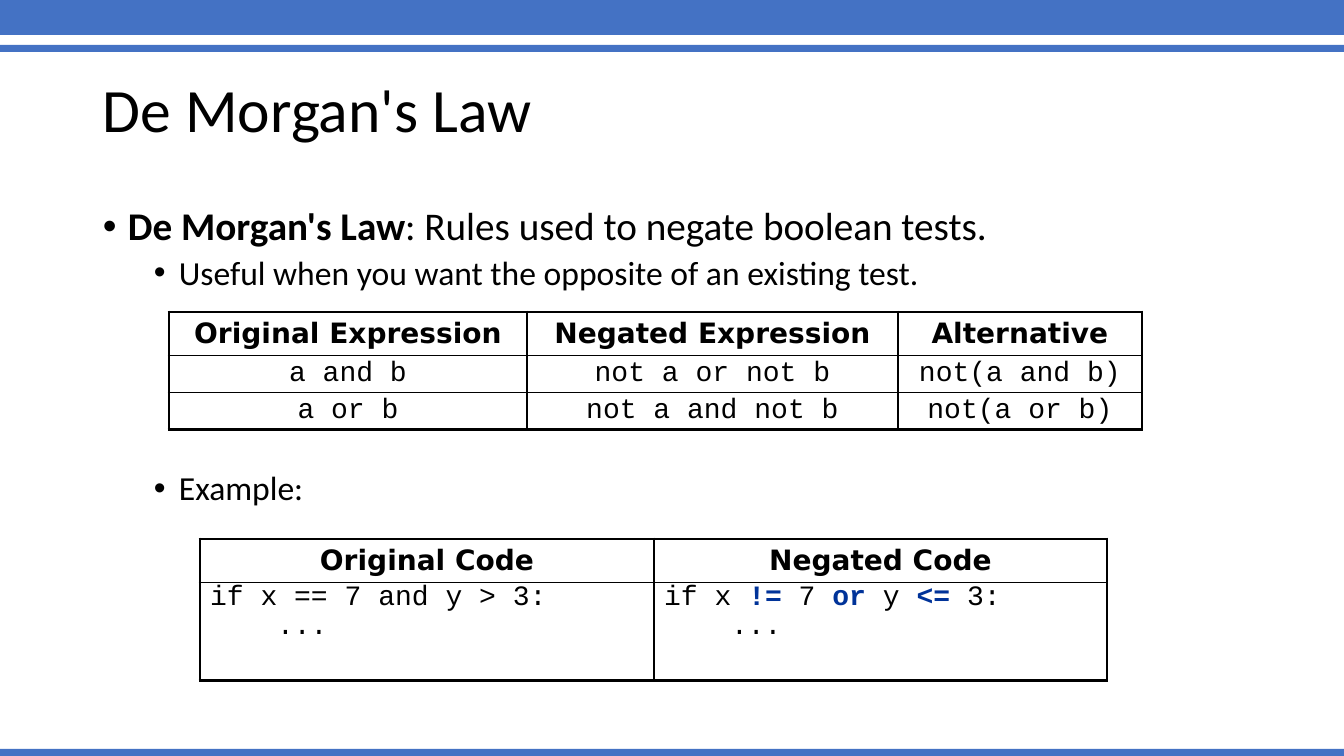
import lxml.etree
import pptx
import pptx.dml.color
import pptx.enum.shapes
import pptx.enum.text
import pptx.oxml.ns
import pptx.util

SCALE = 914400 / 100.8
SLIDE_SIZE = (1344, 756)
BLACK, BLUE, NAVY = "000000", "4472C4", "003399"
BODY_FONT, HEADER_FONT, CODE_FONT = "Calibri", "DejaVu Sans", "Courier New"

BANDS = [(-3, 38), (45, 7), (749, 7)]
TITLE = "De Morgan's Law"
TITLE_BOX = (93, 40, 1159, 146)
BODY_BOX = (93, 202, 1159, 480)
BULLETS = [
    {"spans": [("De Morgan's Law", {"bold": True}), (": Rules used to negate boolean tests.", {})],
     "size": 28, "left": 25, "before": 10},
    {"spans": [("Useful when you want the opposite of an existing test.", {})],
     "size": 24, "left": 76, "before": 5},
    {"spans": [("Example:", {})], "size": 24, "left": 76, "before": 128},
]
BULLET_HANG = 25
CODE_INDENT = 67

RULES = {
    "corner": (169, 312),
    "widths": [358, 371, 244],
    "heights": [43, 37, 37],
    "rows": [
        ["Original Expression", "Negated Expression", "Alternative"],
        ["a and b", "not a or not b", "not(a and b)"],
        ["a or b", "not a and not b", "not(a or b)"],
    ],
}
EXAMPLE = {
    "corner": (200, 539),
    "widths": [454, 453],
    "heights": [43, 98],
    "header": ["Original Code", "Negated Code"],
    "code": [
        [("if x == 7 and y > 3:", False)],
        [("if x ", False), ("!=", True), (" 7 ", False), ("or ", True),
         ("y ", False), ("<= ", True), ("3:", False)],
    ],
    "body": "...",
}


def px(length):
    return pptx.util.Emu(round(length * SCALE))


def color(value):
    return pptx.dml.color.RGBColor.from_string(value)


def add_span(para, text, font=BODY_FONT, size=20, bold=False, fill=BLACK):
    span = para.add_run()
    span.text = text
    span.font.name = font
    span.font.size = pptx.util.Pt(size)
    span.font.bold = bold
    span.font.color.rgb = color(fill)


def add_box(page, bounds):
    frame = page.shapes.add_textbox(*map(px, bounds)).text_frame
    frame.word_wrap = True
    return frame


def next_para(frame, number):
    return frame.paragraphs[0] if number == 0 else frame.add_paragraph()


def set_indent(para, left, hang=0):
    properties = para._p.get_or_add_pPr()
    properties.set("marL", str(px(left)))
    properties.set("indent", str(-px(hang)))
    return properties


def add_bullets(page):
    frame = add_box(page, BODY_BOX)
    for number, item in enumerate(BULLETS):
        para = next_para(frame, number)
        para.line_spacing = 0.9
        para.space_before = pptx.util.Pt(item["before"])
        properties = set_indent(para, item["left"], BULLET_HANG)
        for tag, name, value in [("a:buFont", "typeface", "Arial"), ("a:buChar", "char", "•")]:
            lxml.etree.SubElement(properties, pptx.oxml.ns.qn(tag)).set(name, value)
        for text, style in item["spans"]:
            add_span(para, text, size=item["size"], **style)


def set_borders(cell, widths):
    properties = cell._tc.get_or_add_tcPr()
    for index, (side, width) in enumerate(zip("LRTB", widths)):
        line = lxml.etree.Element(pptx.oxml.ns.qn(f"a:ln{side}"), w=str(pptx.util.Pt(width)))
        fill = lxml.etree.SubElement(line, pptx.oxml.ns.qn("a:solidFill"))
        lxml.etree.SubElement(fill, pptx.oxml.ns.qn("a:srgbClr"), val=BLACK)
        properties.insert(index, line)


def add_grid(page, content):
    widths, heights = content["widths"], content["heights"]
    bounds = (*content["corner"], sum(widths), sum(heights))
    table = page.shapes.add_table(len(heights), len(widths), *map(px, bounds)).table
    table.first_row = table.horz_banding = False
    for column, width in zip(table.columns, widths):
        column.width = px(width)
    for row, height in zip(table.rows, heights):
        row.height = px(height)
    last_row, last_column = len(heights) - 1, len(widths) - 1
    for i in range(len(heights)):
        for j in range(len(widths)):
            cell = table.cell(i, j)
            cell.fill.background()
            outer = (j == 0, j == last_column, i == 0, i == last_row)
            set_borders(cell, [2.25 if edge else 1 for edge in outer])
    return table


def fill_centered(cell, text, header):
    para = cell.text_frame.paragraphs[0]
    para.alignment = pptx.enum.text.PP_ALIGN.CENTER
    para.line_spacing = 1.0 if header else 0.8
    add_span(para, text, font=HEADER_FONT if header else CODE_FONT, bold=header)


def add_rules(page):
    table = add_grid(page, RULES)
    for i, row in enumerate(RULES["rows"]):
        for j, text in enumerate(row):
            fill_centered(table.cell(i, j), text, i == 0)


def add_example(page):
    table = add_grid(page, EXAMPLE)
    for j, (header, spans) in enumerate(zip(EXAMPLE["header"], EXAMPLE["code"])):
        fill_centered(table.cell(0, j), header, True)
        frame = table.cell(1, j).text_frame
        for number, line in enumerate([spans, [(EXAMPLE["body"], False)]]):
            para = next_para(frame, number)
            para.line_spacing = 0.7
            para.space_before = pptx.util.Pt(5)
            set_indent(para, number * CODE_INDENT)
            for text, changed in line:
                add_span(para, text, font=CODE_FONT, bold=changed, fill=NAVY if changed else BLACK)


def main():
    deck = pptx.Presentation()
    deck.slide_width, deck.slide_height = map(px, SLIDE_SIZE)
    page = deck.slides.add_slide(deck.slide_layouts[6])
    for top, height in BANDS:
        band = page.shapes.add_shape(
            pptx.enum.shapes.MSO_SHAPE.RECTANGLE, *map(px, (0, top, SLIDE_SIZE[0], height)))
        band.shadow.inherit = False
        band.fill.solid()
        band.fill.fore_color.rgb = color(BLUE)
        band.line.fill.background()
    title = add_box(page, TITLE_BOX)
    title.vertical_anchor = pptx.enum.text.MSO_ANCHOR.MIDDLE
    title.paragraphs[0].line_spacing = 0.9
    add_span(title.paragraphs[0], TITLE, size=44)
    add_bullets(page)
    add_rules(page)
    add_example(page)
    deck.save("out.pptx")


if __name__ == "__main__":
    main()
